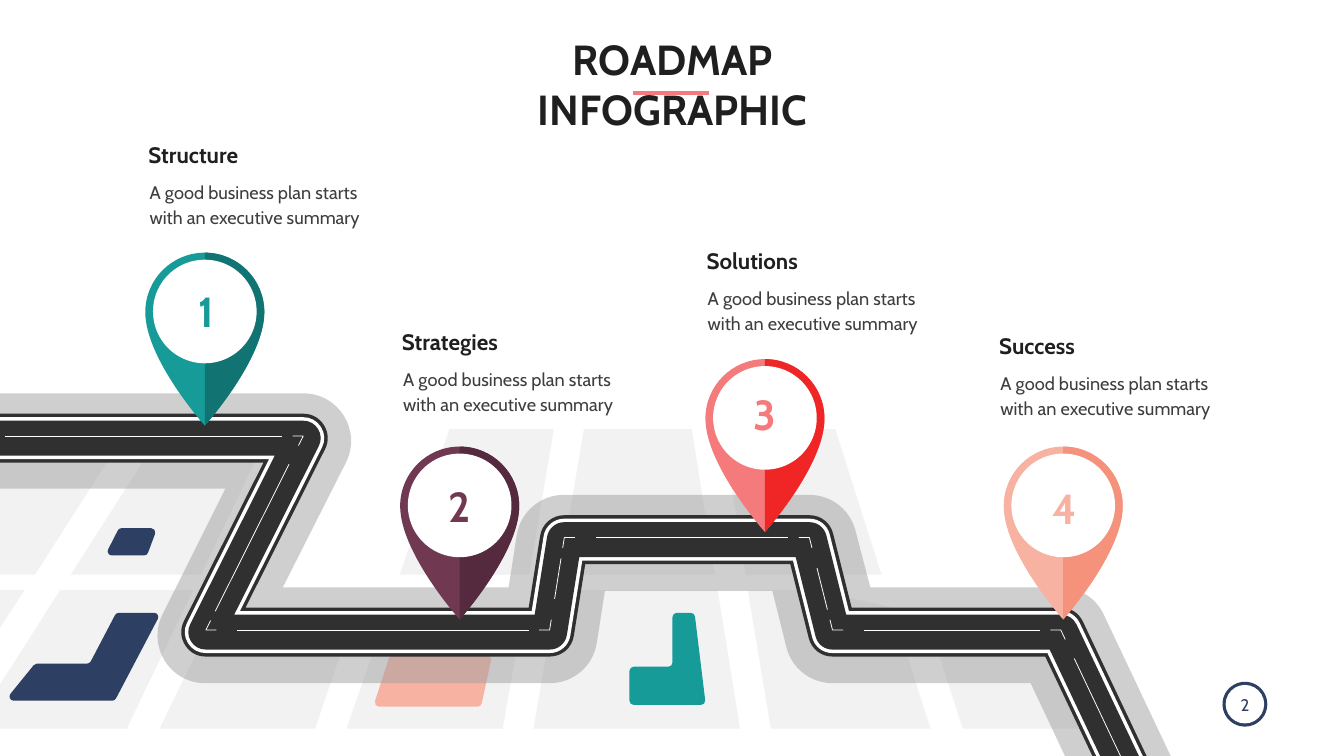
from math import acos, dist, pi, tan
from itertools import pairwise
from lxml.etree import SubElement
from pptx import Presentation
from pptx.dml.color import RGBColor
from pptx.enum.shapes import MSO_CONNECTOR, MSO_SHAPE
from pptx.enum.text import MSO_ANCHOR, PP_ALIGN
from pptx.oxml.ns import qn
from pptx.util import Pt

WHITE = RGBColor(0xFF, 0xFF, 0xFF)
BLACK = RGBColor(0x1F, 0x1F, 0x1F)
GREY = RGBColor(0x3E, 0x3E, 0x3E)
ROAD = RGBColor(0x30, 0x30, 0x30)
HALO = RGBColor(0xA0, 0xA0, 0xA0)
BLOCK = RGBColor(0xF2, 0xF2, 0xF2)
STRIP = RGBColor(0xE8, 0xED, 0xE5)
NAVY = RGBColor(0x2D, 0x3F, 0x63)
TEAL = RGBColor(0x17, 0x9B, 0x98)
PINE = RGBColor(0x11, 0x74, 0x72)
PLUM = RGBColor(0x71, 0x38, 0x52)
WINE = RGBColor(0x55, 0x2A, 0x3E)
ROSE = RGBColor(0xF5, 0x7A, 0x7B)
RED = RGBColor(0xEF, 0x25, 0x26)
PEACH = RGBColor(0xF8, 0xB2, 0xA2)
CORAL = RGBColor(0xF5, 0x92, 0x7C)

TITLE = "ROADMAP INFOGRAPHIC"
BODY = "A good business plan starts with an executive summary"
STEPS = [
    dict(name="Structure", left=205, top=197, tip=(292.5, 608), num=(295, 405), tones=(TEAL, PINE)),
    dict(name="Strategies", left=567, top=464.5, tip=(656.5, 885), num=(656.5, 682.5), tones=(PLUM, WINE)),
    dict(name="Solutions", left=1002, top=348.5, tip=(1092.5, 760), num=(1092, 552), tones=(ROSE, RED)),
    dict(name="Success", left=1420, top=470, tip=(1518.5, 885), num=(1520.5, 686), tones=(PEACH, CORAL)),
]
BLOCKS = [
    [(550, 882), (744, 892), (718, 1041), (495, 1041)],
    [(1323, 878), (1494, 917), (1578, 1041), (1375, 1041)],
    [(1068, 843), (1166, 843), (1274, 868), (1329, 1041), (1101, 1041)],
    [(796, 843), (1025, 843), (1057, 1041), (762, 1041)],
    [(324, 843), (361, 843), (352, 870), (505, 879), (450, 1041), (228, 1041)],
    [(86, 843), (276, 843), (181, 1041), (0, 1041), (0, 978)],
    [(0, 843), (35, 843), (0, 897)],
    [(1032, 613), (1193, 613), (1259, 821), (1065, 821)],
    [(834, 613), (988, 613), (1021, 821), (799, 821)],
    [(642, 613), (791, 613), (756, 821), (571, 821)],
    [(234, 613), (264, 613), (380, 626), (287, 821), (101, 821)],
    [(21, 613), (183, 613), (50, 821), (0, 821), (0, 639)],
]
VERGE = [(330, 821), (364, 821), (424, 631), (422, 631)]
HOUSES = [
    (PEACH, [(557, 936), (703, 936), (687, 1009.5), (533, 1009.5)]),
    (NAVY, [(166, 875.5), (230, 875.5), (164, 1001), (7, 1001), (50, 948), (128, 948)]),
    (TEAL, [(960.5, 875.5), (992, 875.5), (1008, 1007), (899, 1007), (899, 952.5), (960.5, 952.5)]),
    (NAVY, [(170, 754.5), (224.5, 754.5), (210, 793.5), (150, 793.5)]),
]
EDGE = [
    (0, 562), (544, 562, 68), (404, 839), (726.5, 839), (747, 707, 68), (1208.5, 707, 68),
    (1243, 839), (1558, 839, 68), (1672, 1080), (1521, 1080), (1472, 976), (1136, 976, 68),
    (1103, 844), (864, 844), (843.5, 976, 68), (183, 976, 68), (322, 698), (0, 698),
]
TRACK = [(-38, 626), (433, 626), (294, 903), (785, 903), (806, 771),
         (1156, 771), (1189, 903), (1515, 903), (1642, 1171)]
LAYERS = [(ROAD, 70), (WHITE, 60), (ROAD, 50)]

deck = Presentation()
deck.slide_width, deck.slide_height = Pt(1919.52), Pt(1080)
slide = deck.slides.add_slide(deck.slide_layouts[6])
shapes = slide.shapes


def toward(a, b, gap):
    part = gap / dist(a, b)
    return a[0] + (b[0] - a[0]) * part, a[1] + (b[1] - a[1]) * part


def soften(ring):
    spots = []
    for i, (x, y, *size) in enumerate(ring):
        spot = (x, y)
        if not size:
            spots.append(spot)
            continue
        prev, after = ring[i - 1][:2], ring[(i + 1) % len(ring)][:2]
        a, b = toward(spot, prev, 1), toward(spot, after, 1)
        angle = acos((a[0] - x) * (b[0] - x) + (a[1] - y) * (b[1] - y))
        cut = size[0] / tan(angle / 2)
        pull = cut - size[0] * 4 / 3 * tan((pi - angle) / 4)
        spots += [toward(spot, prev, cut), (*toward(spot, prev, pull), "bend"),
                  toward(spot, after, pull), toward(spot, after, cut)]
    return spots


def style(shape, fill=None, line=None, width=1):
    shape.shadow.inherit = False
    if fill is None:
        shape.fill.background()
    else:
        shape.fill.solid()
        shape.fill.fore_color.rgb = fill
    if line is None:
        shape.line.fill.background()
    else:
        shape.line.color.rgb = line
        shape.line.width = Pt(width)
    return shape


def draw(*rings, close=True, **look):
    pen = shapes.build_freeform(*map(Pt, rings[0][0][:2]), scale=1.0)
    for i, ring in enumerate(rings):
        if i:
            pen.move_to(*map(Pt, ring[0][:2]))
        pen.add_line_segments([(Pt(p[0]), Pt(p[1])) for p in ring[1:]], close=close)
    shape = pen.convert_to_shape()
    legs = list(shape._element.iter(qn("a:lnTo")))
    marks = [p for ring in rings for p in ring[1:]]
    for i, mark in enumerate(marks):
        if len(mark) == 3:
            legs[i].tag = qn("a:cubicBezTo")
            for leg in legs[i + 1:i + 3]:
                legs[i].append(leg[0])
                leg.getparent().remove(leg)
    return style(shape, **look)


def disc(x, y, r, fill):
    style(shapes.add_shape(MSO_SHAPE.OVAL, Pt(x - r), Pt(y - r), Pt(2 * r), Pt(2 * r)), fill)


def line(a, b, tone, width):
    rule = shapes.add_connector(MSO_CONNECTOR.STRAIGHT, *map(Pt, (*a, *b)))
    rule.line.color.rgb = tone
    rule.line.width = Pt(width)
    SubElement(rule._element.spPr, qn("a:effectLst"))


def write(text, x, y, w, h, size, tone, bold=False, align=PP_ALIGN.LEFT,
          anchor=MSO_ANCHOR.TOP, wrap=True, inset=(7.2, 3.6), lead=None):
    frame = shapes.add_textbox(Pt(x), Pt(y), Pt(w), Pt(h)).text_frame
    frame.word_wrap = wrap
    frame.vertical_anchor = anchor
    frame.margin_left = frame.margin_right = Pt(inset[0])
    frame.margin_top = frame.margin_bottom = Pt(inset[1])
    para = frame.paragraphs[0]
    para.alignment = align
    if lead:
        para.line_spacing = Pt(lead)
    run = para.add_run()
    run.text = text
    run.font.name, run.font.size, run.font.bold = "Cabin", Pt(size), bold
    run.font.color.rgb = tone


def pin(tip, tones):
    x, y = tip[0], tip[1] - 162
    r, k = 85, 47
    right = [(x, y - r), (x + k, y - r, "bend"), (x + r, y - k), (x + r, y),
             (x + r, y + 67, "bend"), tip, tip]
    left = [(*tip, "bend"), (x - r, y + 67), (x - r, y),
            (x - r, y - k, "bend"), (x - k, y - r), (x, y - r)]
    draw(right + left, fill=tones[0])
    draw(right, fill=tones[1])
    disc(x, y - 1, 74, WHITE)


draw(*BLOCKS, fill=BLOCK)
draw(VERGE, fill=STRIP)
for tone, ring in HOUSES:
    draw(soften([(x, y, 6) for x, y in ring]), fill=tone)

halo = draw(soften(EDGE), fill=HALO)
SubElement(halo._element.spPr.find(qn("a:solidFill"))[0], qn("a:alpha"), val="50000")
for tone, width in LAYERS:
    road = draw(TRACK, close=False, line=tone, width=width)
    SubElement(road._element.spPr.find(qn("a:ln")), qn("a:round"))

lane = [(x, y - 3) for x, y in TRACK]
for a, b in pairwise(lane):
    line(toward(a, b, 45), toward(b, a, 30), WHITE, 1.11)
for a, b, c in zip(lane, lane[1:], lane[2:]):
    draw([toward(b, a, 15), b, toward(b, c, 15)], close=False, line=WHITE, width=1.11)

for num, step in enumerate(STEPS, 1):
    left, top = step["left"], step["top"]
    pin(step["tip"], step["tones"])
    x, y = step["num"]
    write(str(num), x - 24, y, 48, 80, 60, step["tones"][0], bold=True,
          align=PP_ALIGN.CENTER, wrap=False)
    write(step["name"], left, top, 180, 46, 32, BLACK, bold=True, anchor=MSO_ANCHOR.BOTTOM)
    write(BODY, left - 8.5, top + 49.5, 368, 88, 26, GREY, anchor=MSO_ANCHOR.BOTTOM,
          inset=(17.28, 8.64), lead=36)

write(TITLE, 623.5, 44, 674, 80, 60, BLACK, bold=True, align=PP_ALIGN.CENTER)
line((904.5, 133), (1012.5, 133), ROSE, 5)

disc(1778, 1006, 32, NAVY)
disc(1778, 1006, 27.5, WHITE)
write("2", 1756.5, 988.5, 43, 36, 24, NAVY, align=PP_ALIGN.CENTER, wrap=False)

deck.save("out.pptx")
